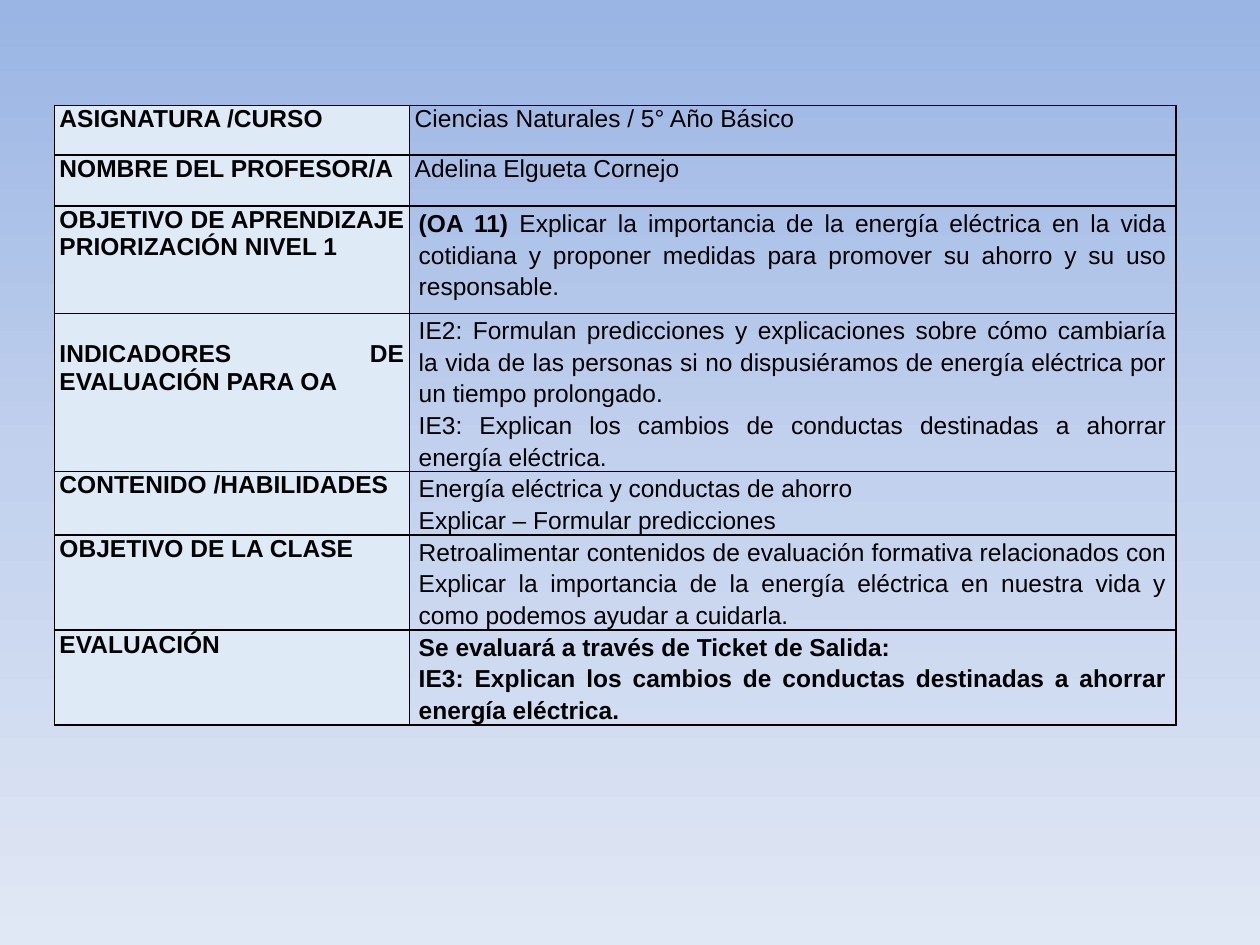
"""Build a lesson plan slide: one table of headings and details on a blue gradient."""
from copy import deepcopy

from lxml.etree import SubElement
from pptx import Presentation
from pptx.dml.color import RGBColor
from pptx.enum.text import PP_ALIGN
from pptx.oxml.ns import qn
from pptx.util import Pt

BACKGROUND_STOPS = [(0, "9AB5E4"), (0.5, "C2D1ED"), (1, "E1E8F5")]
HEADING_FILL = "DEEAF6"
BLACK = "000000"
FONT_NAME, FONT_SIZE = "Arial", 14
TABLE_LEFT, TABLE_TOP = 31, 60.25
COLUMN_WIDTHS = [203, 438]
NARROW, WIDE = 3, 5.3
INDICATOR = "IE3: Explican los cambios de conductas destinadas a ahorrar energía eléctrica."

# Each row: height, heading, heading top margin, detail side margin, detail line spacing, detail paragraphs of (text, bold) runs
ROWS = [
    (28.4, "ASIGNATURA /CURSO", 0, NARROW, 1, [[("Ciencias Naturales / 5° Año Básico", False)]]),
    (29.2, "NOMBRE DEL PROFESOR/A", 0, NARROW, 1, [[("Adelina Elgueta Cornejo", False)]]),
    (61.2, "OBJETIVO DE APRENDIZAJE PRIORIZACIÓN NIVEL 1", 0, WIDE, 1.15, [[
        ("(OA 11) ", True),
        ("Explicar la importancia de la energía eléctrica en la vida cotidiana y proponer "
         "medidas para promover su ahorro y su uso responsable.", False)]]),
    (90.4, "INDICADORES DE EVALUACIÓN PARA OA", 15.7, WIDE, 1.15, [
        [("IE2: Formulan predicciones y explicaciones sobre cómo cambiaría la vida de las personas "
          "si no dispusiéramos de energía eléctrica por un tiempo prolongado.", False)],
        [(INDICATOR, False)]]),
    (36.2, "CONTENIDO /HABILIDADES", 0, WIDE, 1.15, [
        [("Energía eléctrica y conductas de ahorro", False)],
        [("Explicar – Formular predicciones", False)]]),
    (54.3, "OBJETIVO DE LA CLASE", 0, WIDE, 1.15, [[
        ("Retroalimentar contenidos de evaluación formativa relacionados con Explicar la importancia "
         "de la energía eléctrica en nuestra vida y como podemos ayudar a cuidarla.", False)]]),
    (54.3, "EVALUACIÓN", 1, WIDE, 1.15, [
        [("Se evaluará a través de Ticket de Salida:", True)],
        [(INDICATOR, True)]]),
]


def color(value):
    return RGBColor.from_string(value)


def paint_background(slide):
    fill = slide.background.fill
    fill.gradient()
    fill.gradient_angle = 270
    stop_list = slide.element.find(".//" + qn("a:gsLst"))
    stop_list.insert(1, deepcopy(stop_list[0]))
    for stop, (position, value) in zip(fill.gradient_stops, BACKGROUND_STOPS):
        stop.position = position
        stop.color.rgb = color(value)


def add_borders(cell):
    properties = cell._tc.get_or_add_tcPr()
    for index, side in enumerate(("a:lnL", "a:lnR", "a:lnT", "a:lnB")):
        line = SubElement(properties, qn(side), w=str(Pt(1)))
        SubElement(SubElement(line, qn("a:solidFill")), qn("a:srgbClr"), val=BLACK)
        properties.insert(index, line)


def fill_cell(cell, paragraphs, side_margin, top_margin, line_spacing):
    cell.margin_left = cell.margin_right = Pt(side_margin)
    cell.margin_top, cell.margin_bottom = Pt(top_margin), Pt(0)
    for index, runs in enumerate(paragraphs):
        paragraph = cell.text_frame.add_paragraph() if index else cell.text_frame.paragraphs[0]
        paragraph.alignment = PP_ALIGN.JUSTIFY
        paragraph.line_spacing = line_spacing
        paragraph.font.name = FONT_NAME
        paragraph.font.size = Pt(FONT_SIZE)
        paragraph.font.color.rgb = color(BLACK)
        for text, bold in runs:
            run = paragraph.add_run()
            run.text = text
            run.font.name = FONT_NAME
            run.font.size = Pt(FONT_SIZE)
            run.font.bold = bold
            run.font.color.rgb = color(BLACK)


def add_plan_table(slide):
    height = sum(row[0] for row in ROWS)
    table = slide.shapes.add_table(
        len(ROWS), len(COLUMN_WIDTHS), Pt(TABLE_LEFT), Pt(TABLE_TOP), Pt(sum(COLUMN_WIDTHS)), Pt(height)
    ).table
    table.first_row = table.horz_banding = False
    for column, width in zip(table.columns, COLUMN_WIDTHS):
        column.width = Pt(width)
    for index, (height, heading, top_margin, side_margin, line_spacing, details) in enumerate(ROWS):
        table.rows[index].height = Pt(height)
        heading_cell, detail_cell = table.cell(index, 0), table.cell(index, 1)
        fill_cell(heading_cell, [[(heading, True)]], NARROW, top_margin, 1)
        fill_cell(detail_cell, details, side_margin, 0, line_spacing)
        heading_cell.fill.solid()
        heading_cell.fill.fore_color.rgb = color(HEADING_FILL)
        detail_cell.fill.background()
        add_borders(heading_cell)
        add_borders(detail_cell)


def main():
    presentation = Presentation()
    presentation.slide_width, presentation.slide_height = Pt(720), Pt(540)
    slide = presentation.slides.add_slide(presentation.slide_layouts[6])
    paint_background(slide)
    add_plan_table(slide)
    presentation.save("out.pptx")


if __name__ == "__main__":
    main()
